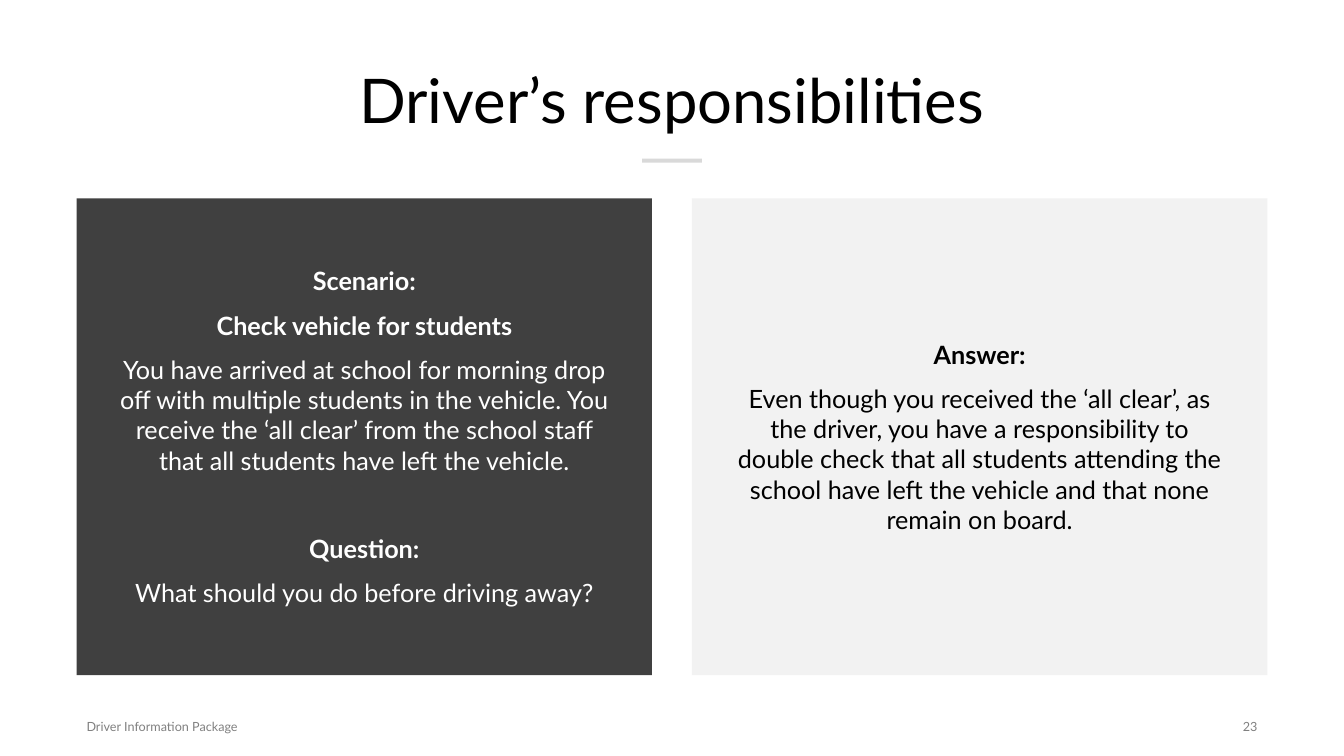
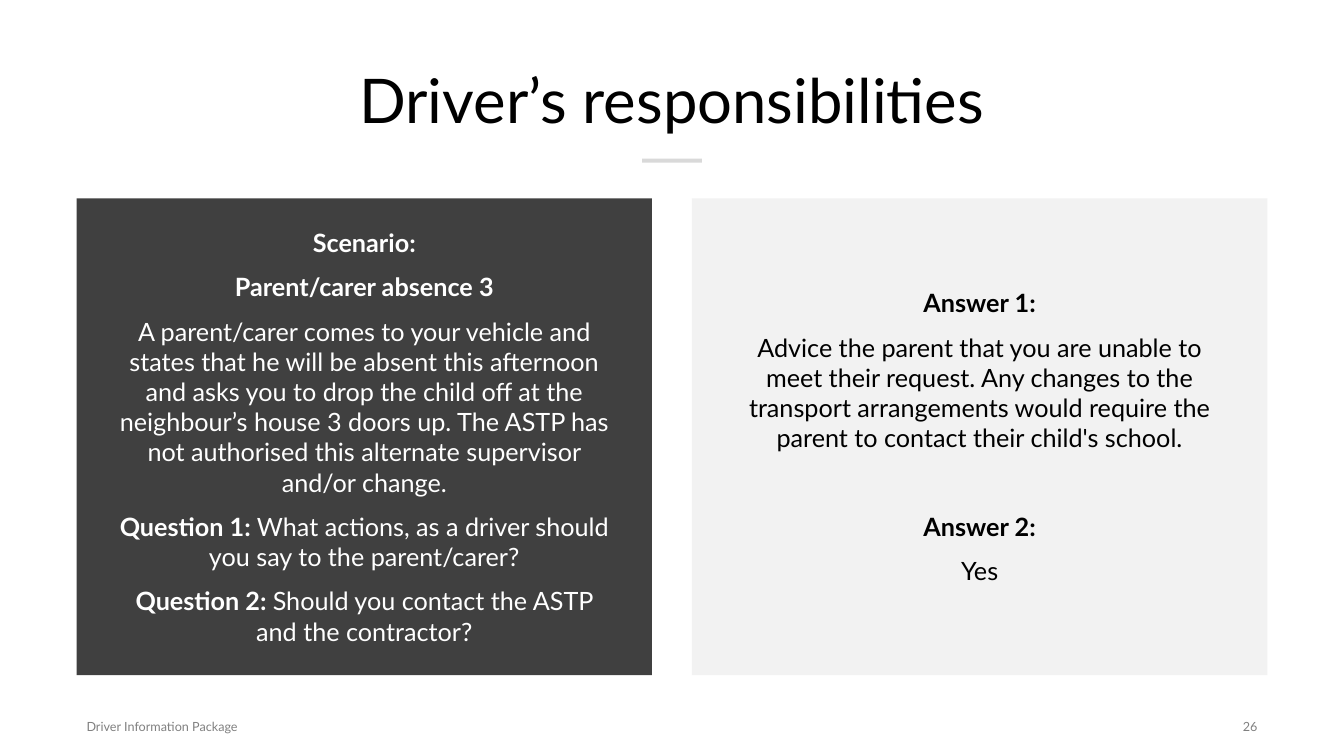
"""Build two scenario-and-answer slides for a driver information package."""
from dataclasses import dataclass

from pptx import Presentation
from pptx.dml.color import RGBColor
from pptx.enum.shapes import MSO_SHAPE
from pptx.enum.text import MSO_ANCHOR, PP_ALIGN
from pptx.util import Emu, Pt

TITLE = "Driver’s responsibilities"
FOOTER = "Driver Information Package"

BOLD, PLAIN = True, False
CLOSE, APART = 10, 41.6

PAGES = [
    {
        "number": 23,
        "scenario": [
            (CLOSE, [("Scenario:", BOLD)]),
            (CLOSE, [("Check vehicle for students", BOLD)]),
            (CLOSE, [("You have arrived at school for morning drop off with multiple "
                      "students in the vehicle. You receive the ‘all clear’ from the "
                      "school staff that all students have left the vehicle.", PLAIN)]),
            (APART, [("Question:", BOLD)]),
            (CLOSE, [("What should you do before driving away?", PLAIN)]),
        ],
        "answer": [
            (CLOSE, [("Answer:", BOLD)]),
            (CLOSE, [("Even though you received the ‘all clear’, as the driver, you have "
                      "a responsibility to double check that all students attending the "
                      "school have left the vehicle and that none remain on board.", PLAIN)]),
        ],
    },
    {
        "number": 26,
        "scenario": [
            (CLOSE, [("Scenario:", BOLD)]),
            (CLOSE, [("Parent/carer absence 3", BOLD)]),
            (CLOSE, [("A parent/carer comes to your vehicle and states that he will be "
                      "absent this afternoon and asks you to drop the child off at the "
                      "neighbour’s house 3 doors up. The ASTP has not authorised this "
                      "alternate supervisor and/or change.", PLAIN)]),
            (CLOSE, [("Question 1:", BOLD),
                     (" What actions, as a driver should you say to the parent/carer?", PLAIN)]),
            (CLOSE, [("Question 2: ", BOLD),
                     ("Should you contact the ASTP and the contractor?", PLAIN)]),
        ],
        "answer": [
            (CLOSE, [("Answer 1:", BOLD)]),
            (CLOSE, [("Advice the parent that you are unable to meet their request. Any "
                      "changes to the transport arrangements would require the parent to "
                      "contact their child's school.", PLAIN)]),
            (APART, [("Answer 2:", BOLD)]),
            (CLOSE, [("Yes", PLAIN)]),
        ],
    },
]


@dataclass(frozen=True)
class Theme:
    """Colours, font and type sizes of the deck."""
    font: str = "Lato"
    ink: str = "000000"
    paper: str = "FFFFFF"
    dark: str = "404040"
    light: str = "F2F2F2"
    accent: str = "D9D9D9"
    muted: str = "808080"
    title_size: int = 44
    body_size: int = 18
    footer_size: int = 9


THEME = Theme()
PX = 9525
WIDTH, HEIGHT = 1280, 720
MARGIN, GAP = 73, 38
CONTENT = WIDTH - 2 * MARGIN
PANEL = (CONTENT - GAP) // 2
PANEL_TOP, PANEL_HEIGHT = 189, 454
TITLE_TOP, TITLE_HEIGHT = 38, 113
RULE_WIDTH, RULE_HEIGHT = 57, 4
FOOTER_TOP, FOOTER_HEIGHT = 673, 38
FOOTER_WIDTH, NUMBER_WIDTH = 453, 113


def place(left, top, width, height):
    """Turn a frame in px into EMU."""
    return [Emu(round(length * PX)) for length in (left, top, width, height)]


def add_block(page, frame, fill):
    """Add a filled rectangle without outline or shadow."""
    block = page.shapes.add_shape(MSO_SHAPE.RECTANGLE, *place(*frame))
    block.shadow.inherit = False
    block.fill.solid()
    block.fill.fore_color.rgb = RGBColor.from_string(fill)
    block.line.fill.background()
    return block


def style(para, size, color, align):
    """Set the font and alignment of a paragraph."""
    para.alignment = align
    para.font.name = THEME.font
    para.font.size = Pt(size)
    para.font.color.rgb = RGBColor.from_string(color)


def add_label(page, frame, text, size, color, align):
    """Add one line of text, centred vertically in its frame."""
    label = page.shapes.add_textbox(*place(*frame)).text_frame
    label.word_wrap = True
    label.vertical_anchor = MSO_ANCHOR.MIDDLE
    label.text = text
    style(label.paragraphs[0], size, color, align)


def add_panel(page, column, paragraphs, fill, color):
    """Add a text panel in the given column."""
    left = MARGIN + column * (PANEL + GAP)
    body = add_block(page, (left, PANEL_TOP, PANEL, PANEL_HEIGHT), fill).text_frame
    body.word_wrap = True
    body.vertical_anchor = MSO_ANCHOR.MIDDLE
    body.margin_left = body.margin_right = Emu(GAP * PX)
    body.margin_top = body.margin_bottom = Emu(GAP * PX)
    for index, (space, spans) in enumerate(paragraphs):
        para = body.add_paragraph() if index else body.paragraphs[0]
        style(para, THEME.body_size, color, PP_ALIGN.CENTER)
        para.space_before = Pt(space)
        for text, bold in spans:
            span = para.add_run()
            span.text = text
            span.font.bold = bold


def add_frame(page, number):
    """Add the title, rule and footer that every page shares."""
    add_block(page, ((WIDTH - RULE_WIDTH) / 2, TITLE_TOP + TITLE_HEIGHT,
                     RULE_WIDTH, RULE_HEIGHT), THEME.accent)
    add_label(page, (MARGIN, TITLE_TOP, CONTENT, TITLE_HEIGHT), TITLE,
              THEME.title_size, THEME.ink, PP_ALIGN.CENTER)
    add_label(page, (MARGIN, FOOTER_TOP, FOOTER_WIDTH, FOOTER_HEIGHT), FOOTER,
              THEME.footer_size, THEME.muted, PP_ALIGN.LEFT)
    add_label(page, (WIDTH - MARGIN - NUMBER_WIDTH, FOOTER_TOP, NUMBER_WIDTH, FOOTER_HEIGHT),
              str(number), THEME.footer_size, THEME.muted, PP_ALIGN.RIGHT)


def main():
    """Build and save the deck."""
    deck = Presentation()
    deck.slide_width, deck.slide_height = Emu(WIDTH * PX), Emu(HEIGHT * PX)
    for content in PAGES:
        page = deck.slides.add_slide(deck.slide_layouts[6])
        add_frame(page, content["number"])
        add_panel(page, 0, content["scenario"], THEME.dark, THEME.paper)
        add_panel(page, 1, content["answer"], THEME.light, THEME.ink)
    deck.save("out.pptx")


if __name__ == "__main__":
    main()
